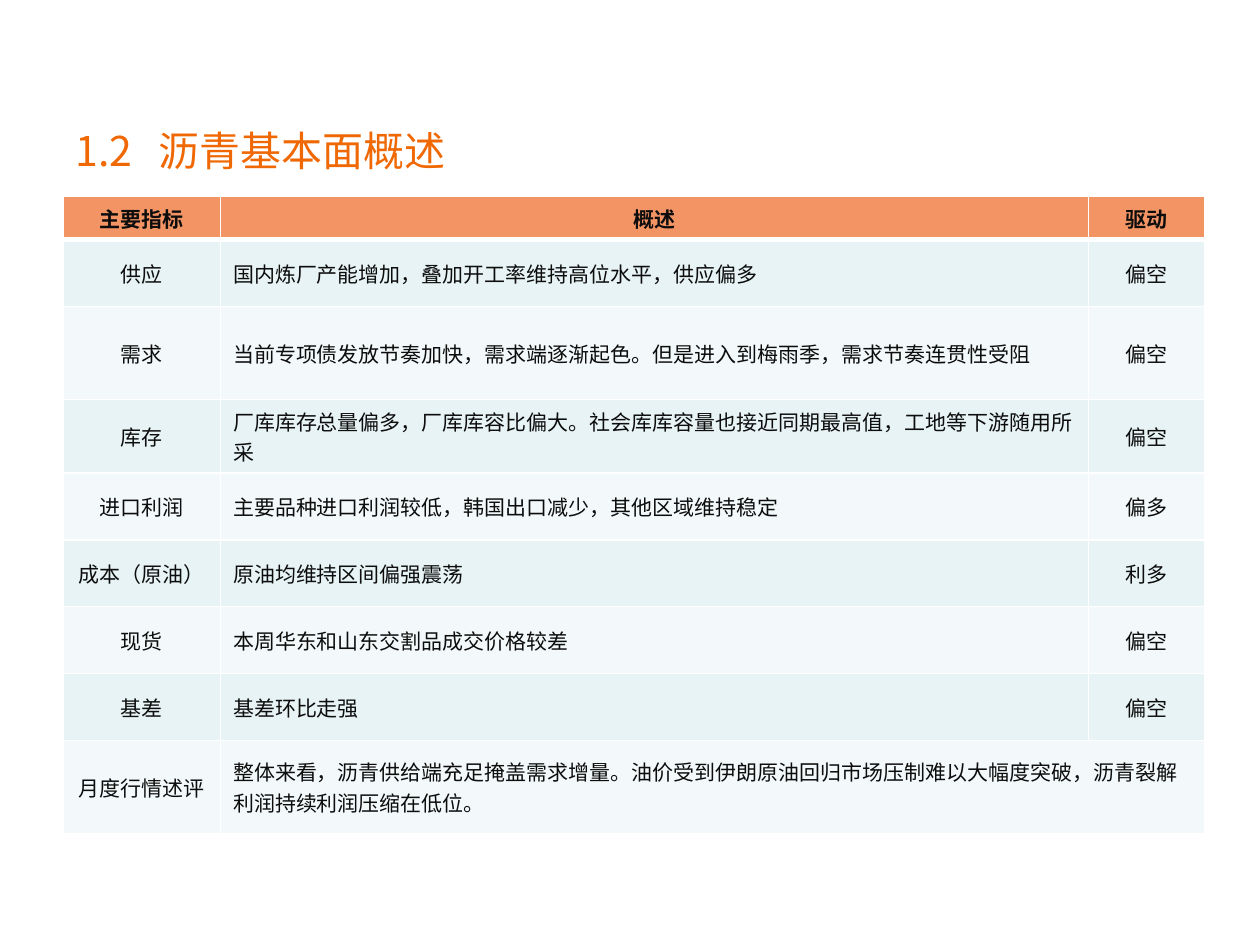
from lxml.etree import SubElement
from pptx import Presentation
from pptx.dml.color import RGBColor as Color
from pptx.enum.text import MSO_ANCHOR as Anchor, MSO_AUTO_SIZE as AutoSize, PP_ALIGN as Align
from pptx.oxml import parse_xml
from pptx.oxml.ns import nsdecls, qn
from pptx.util import Inches, Pt

THEME = {
    "font": "Noto Sans CJK SC",
    "title": {"size": Pt(23.4), "bold": False, "color": "EF6803"},
    "header": {"size": Pt(12), "bold": True, "color": "0D0D0D"},
    "body": {"size": Pt(12), "bold": False, "color": "0D0D0D"},
    "header_fill": "F39464",
    "bands": ["F3F9FA", "E7F3F4"],
    "rule": "FFFFFF",
    "thin": Pt(1),
    "thick": Pt(3),
}

ROWS = [
    ("主要指标", "概述", "驱动"),
    ("供应", "国内炼厂产能增加，叠加开工率维持高位水平，供应偏多", "偏空"),
    ("需求", "当前专项债发放节奏加快，需求端逐渐起色。但是进入到梅雨季，需求节奏连贯性受阻", "偏空"),
    ("库存", "厂库库存总量偏多，厂库库容比偏大。社会库库容量也接近同期最高值，工地等下游随用所采", "偏空"),
    ("进口利润", "主要品种进口利润较低，韩国出口减少，其他区域维持稳定", "偏多"),
    ("成本（原油）", "原油均维持区间偏强震荡", "利多"),
    ("现货", "本周华东和山东交割品成交价格较差", "偏空"),
    ("基差", "基差环比走强", "偏空"),
    ("月度行情述评", "整体来看，沥青供给端充足掩盖需求增量。油价受到伊朗原油回归市场压制"
     "难以大幅度突破，沥青裂解利润持续利润压缩在低位。"),
]
COLUMN_WIDTHS = [1.25, 6.89, 0.92]
HEADER_HEIGHT, ROW_HEIGHT, TALL_HEIGHT = 0.32, 0.53, 0.74
TALL_ROWS = {2, 8}
LEFT, TITLE_TOP, TABLE_TOP = 0.5, 0.95, 1.56


def write(para, text, style, align):
    """Put one formatted run in the paragraph, with the font for Chinese too."""
    para.alignment = align
    span = para.add_run()
    span.text = text
    span.font.color.rgb = Color.from_string(style["color"])
    for name, value in {"name": THEME["font"], "size": style["size"], "bold": style["bold"]}.items():
        setattr(span.font, name, value)
    SubElement(span.font._element, qn("a:ea"), typeface=THEME["font"])


def add_borders(cell, top, bottom):
    widths = {"lnL": THEME["thin"], "lnR": THEME["thin"], "lnT": top, "lnB": bottom}
    for side, width in widths.items():
        line = SubElement(cell._tc.get_or_add_tcPr(), qn(f"a:{side}"), w=str(int(width)))
        fill = SubElement(line, qn("a:solidFill"))
        SubElement(fill, qn("a:srgbClr"), val=THEME["rule"])


deck = Presentation()
deck.slide_width, deck.slide_height = Inches(10), Inches(7.5)
page = deck.slides.add_slide(deck.slide_layouts.get_by_name("Title Only"))

# Title: number, then the heading at a tab stop
title = page.shapes.title
for name, value in {"left": LEFT, "top": TITLE_TOP, "width": 9, "height": 0.48}.items():
    setattr(title, name, Inches(value))
frame = title.text_frame
for name, value in {"vertical_anchor": Anchor.MIDDLE, "auto_size": AutoSize.NONE, "word_wrap": True}.items():
    setattr(frame, name, value)
heading = frame.paragraphs[0]
heading._p.get_or_add_pPr().append(parse_xml(
    f'<a:tabLst {nsdecls("a")}><a:tab pos="{Inches(0.66)}" algn="l"/></a:tabLst>'))
write(heading, "1.2\t沥青基本面概述", THEME["title"], Align.LEFT)

# Table
heights = [HEADER_HEIGHT] + [
    TALL_HEIGHT if row in TALL_ROWS else ROW_HEIGHT for row in range(1, len(ROWS))]
table = page.shapes.add_table(
    len(ROWS), len(COLUMN_WIDTHS), Inches(LEFT), Inches(TABLE_TOP),
    Inches(sum(COLUMN_WIDTHS)), Inches(sum(heights))).table
table.first_row = table.horz_banding = False
for column, width in zip(table.columns, COLUMN_WIDTHS):
    column.width = Inches(width)
for row, height in zip(table.rows, heights):
    row.height = Inches(height)
table.cell(len(ROWS) - 1, 1).merge(table.cell(len(ROWS) - 1, 2))

for r, texts in enumerate(ROWS):
    is_header = r == 0
    fill = THEME["header_fill"] if is_header else THEME["bands"][r % 2]
    for c in range(len(COLUMN_WIDTHS)):
        cell = table.cell(r, c)
        add_borders(cell, THEME["thick" if r == 1 else "thin"],
                    THEME["thick" if is_header else "thin"])
        cell.fill.solid()
        cell.fill.fore_color.rgb = Color.from_string(fill)
        cell.vertical_anchor = Anchor.MIDDLE
        if c < len(texts):
            align = Align.LEFT if c == 1 and not is_header else Align.CENTER
            write(cell.text_frame.paragraphs[0], texts[c],
                  THEME["header" if is_header else "body"], align)

deck.save("out.pptx")
